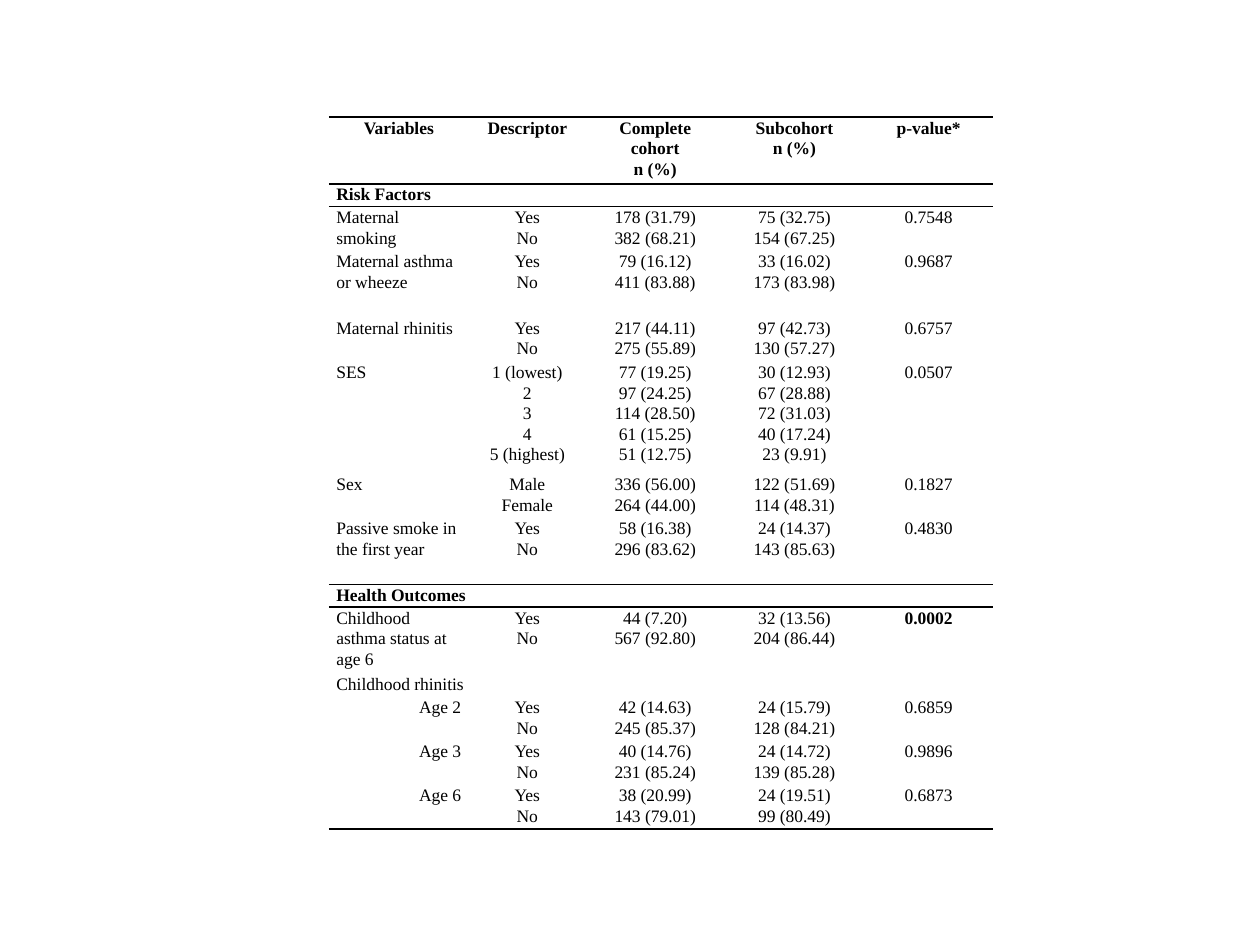
"""Build a slide with a table comparing the complete cohort and the subcohort."""
from lxml.etree import SubElement
from pptx import Presentation
from pptx.dml.color import RGBColor
from pptx.enum.text import PP_ALIGN as Align
from pptx.oxml.ns import qn
from pptx.util import Inches, Pt

COLORS = {"ink": "000000"}
FONT = {"name": "Times New Roman", "size": Pt(10)}
MARGINS = {"margin_left": Inches(0.06), "margin_right": Inches(0.06),
           "margin_top": 0, "margin_bottom": 0}
TABLE_FLAGS = {"first_row": False, "horz_banding": False}
YES_NO = "Yes\nNo"

COLUMN_WIDTHS = [1.11, 0.93, 1.1, 1.11, 1.02]
HEADER = ("Variables", "Descriptor", "Complete cohort\nn (%)", "Subcohort\nn (%)", "p-value*")
ROWS = [
    (0.53, HEADER),
    (0.18, ("Risk Factors",)),
    (0.35, ("Maternal smoking", YES_NO, "178 (31.79)\n382 (68.21)",
            "75 (32.75)\n154 (67.25)", "0.7548")),
    (0.53, ("Maternal asthma or wheeze", YES_NO, "79 (16.12)\n411 (83.88)",
            "33 (16.02)\n173 (83.98)", "0.9687")),
    (0.35, ("Maternal rhinitis", YES_NO, "217 (44.11)\n275 (55.89)",
            "97 (42.73)\n130 (57.27)", "0.6757")),
    (0.89, ("SES", "1 (lowest)\n2\n3\n4\n5 (highest)",
            "77 (19.25)\n97 (24.25)\n114 (28.50)\n61 (15.25)\n51 (12.75)",
            "30 (12.93)\n67 (28.88)\n72 (31.03)\n40 (17.24)\n23 (9.91)", "0.0507")),
    (0.35, ("Sex", "Male\nFemale", "336 (56.00)\n264 (44.00)",
            "122 (51.69)\n114 (48.31)", "0.1827")),
    (0.53, ("Passive smoke in the first year", YES_NO, "58 (16.38)\n296 (83.62)",
            "24 (14.37)\n143 (85.63)", "0.4830")),
    (0.18, ("Health Outcomes",)),
    (0.53, ("Childhood asthma status at age 6", YES_NO, "44 (7.20)\n567 (92.80)",
            "32 (13.56)\n204 (86.44)", "0.0002")),
    (0.18, ("Childhood rhinitis",)),
    (0.35, ("Age 2", YES_NO, "42 (14.63)\n245 (85.37)", "24 (15.79)\n128 (84.21)", "0.6859")),
    (0.35, ("Age 3", YES_NO, "40 (14.76)\n231 (85.24)", "24 (14.72)\n139 (85.28)", "0.9896")),
    (0.35, ("Age 6", YES_NO, "38 (20.99)\n143 (79.01)", "24 (19.51)\n99 (80.49)", "0.6873")),
]
BOLD_TEXTS = {*HEADER, "Risk Factors", "Health Outcomes", "0.0002"}
RULED_EDGES = {0, 1, 2, 8, 9, len(ROWS)}


def set_attributes(target, values):
    for name, value in values.items():
        setattr(target, name, value)


def alignment(row, column, text):
    if column or row == 0:
        return Align.CENTER
    return Align.RIGHT if text.startswith("Age ") else Align.LEFT


def draw_borders(cell, row):
    properties = cell._tc.get_or_add_tcPr()
    ruled = {"L": False, "R": False, "T": row in RULED_EDGES, "B": row + 1 in RULED_EDGES}
    for side, visible in ruled.items():
        line = SubElement(properties, qn(f"a:ln{side}"), w=str(Pt(1)))
        if visible:
            fill = SubElement(line, qn("a:solidFill"))
            SubElement(fill, qn("a:srgbClr"), val=COLORS["ink"])
        else:
            SubElement(line, qn("a:noFill"))


def write_cell(cell, row, column, text):
    set_attributes(cell, MARGINS)
    draw_borders(cell, row)
    cell.fill.background()
    if not text:
        SubElement(cell.text_frame.paragraphs[0]._p, qn("a:endParaRPr"), sz="1000")
        return
    cell.text_frame.text = text
    for paragraph in cell.text_frame.paragraphs:
        set_attributes(paragraph, {"alignment": alignment(row, column, text),
                                   "line_spacing": 1.07})
        for run in paragraph.runs:
            set_attributes(run.font, {**FONT, "bold": text in BOLD_TEXTS})
            run.font.color.rgb = RGBColor.from_string(COLORS["ink"])


def main():
    deck = Presentation()
    deck.slide_width, deck.slide_height = Inches(10), Inches(7.5)
    slide = deck.slides.add_slide(deck.slide_layouts[6])
    total_height = sum(height for height, _ in ROWS)
    cohorts = slide.shapes.add_table(
        len(ROWS), len(COLUMN_WIDTHS), Inches(2.61), Inches(0.93),
        Inches(sum(COLUMN_WIDTHS)), Inches(total_height)).table
    set_attributes(cohorts, TABLE_FLAGS)
    for column, width in zip(cohorts.columns, COLUMN_WIDTHS):
        column.width = Inches(width)
    for row, (height, texts) in enumerate(ROWS):
        cohorts.rows[row].height = Inches(height)
        for column in range(len(COLUMN_WIDTHS)):
            text = texts[column] if column < len(texts) else ""
            write_cell(cohorts.cell(row, column), row, column, text)
        if len(texts) == 1:
            cohorts.cell(row, 0).merge(cohorts.cell(row, len(COLUMN_WIDTHS) - 1))
    deck.save("out.pptx")


if __name__ == "__main__":
    main()
